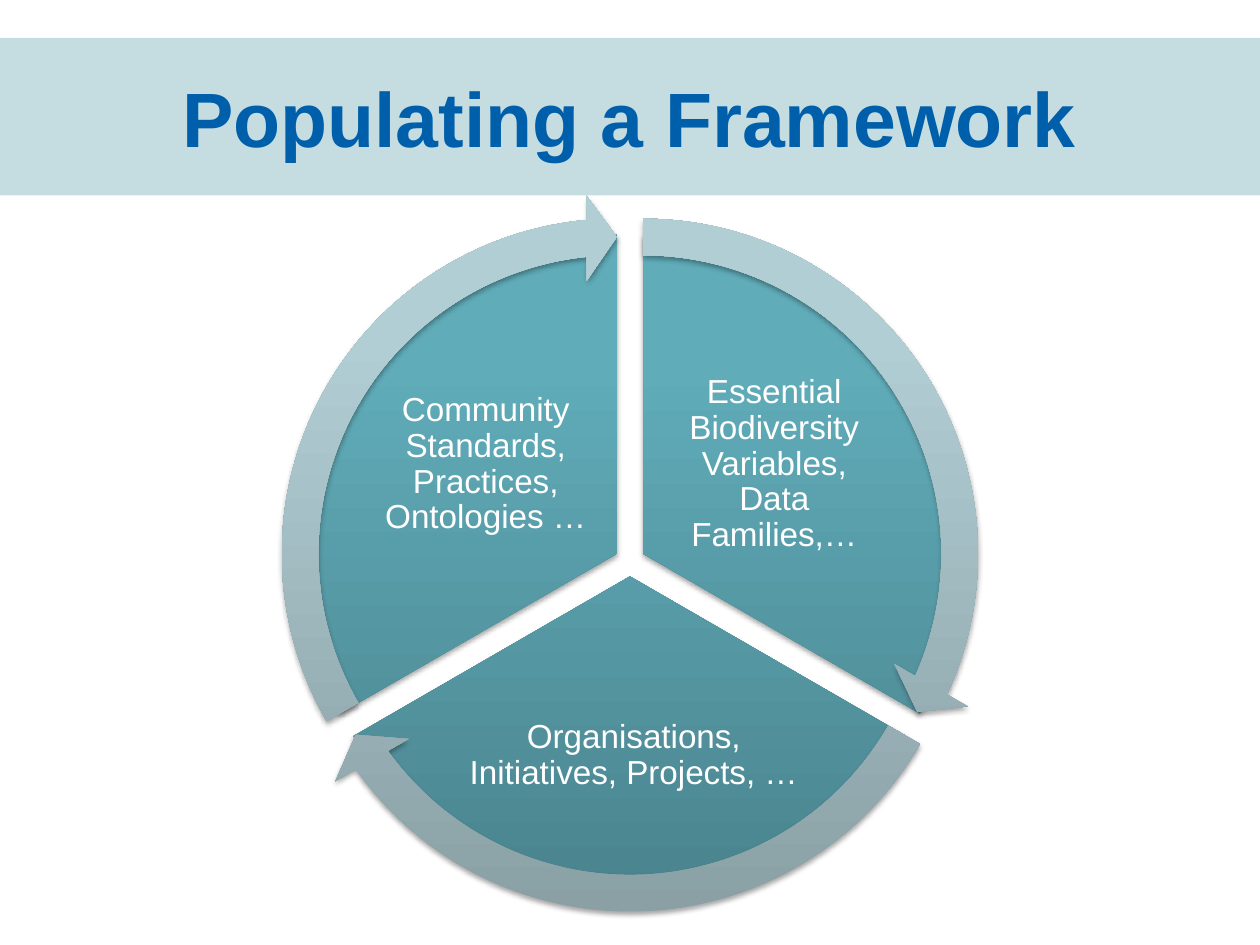
import math

from lxml import etree
from pptx import Presentation
from pptx import util as u
from pptx.dml.color import RGBColor
from pptx.enum import shapes, text
from pptx.oxml.ns import qn

COLOURS = {"band": "C5DDE1", "title": "005FAA", "label": "FFFFFF", "shadow": "000000"}
# Gradient stops from bottom to top: position in percent, colour
SECTOR_STOPS = [(0, "4A848E"), (80, "60ACB9"), (100, "5FAEBB")]
ARROW_STOPS = [(0, "889EA3"), (80, "B1CED4"), (100, "B1CFD5")]

COLUMNS, ROWS = 100, 75
CENTRE = (50, 44.55)
SPREAD = 1.2          # how far each sector is pushed out from the centre
SECTOR_SIZE, ARROW_SIZE = 50.7, 57
ANGLE_UNIT = 0.6      # one degree, as an adjustment value
ARROW_HEAD = 3.275    # angle taken by the arrowhead, as an adjustment value

# Clockwise from the top: label, then its left, top, width, height
SECTORS = [
    ("Essential Biodiversity Variables, Data Families,…", (52.4, 29.3, 18.1, 15.1)),
    ("Organisations, Initiatives, Projects, …", (36.7, 53.3, 27.2, 13.3)),
    ("Community Standards, Practices, Ontologies …", (29.5, 29.3, 18.1, 15.1)),
]


class SlideBuilder:
    font = "Arial"

    def __init__(self, deck):
        self.slide = deck.slides.add_slide(deck.slide_layouts[6])
        self.column = deck.slide_width / COLUMNS
        self.row = deck.slide_height / ROWS

    def place(self, left, top, width, height):
        return (round(left * self.column), round(top * self.row),
                round(width * self.column), round(height * self.row))

    def set_words(self, frame, words, size, colour, bold=False, spacing=1.0):
        frame.text = words
        frame.word_wrap = True
        frame.vertical_anchor = text.MSO_ANCHOR.MIDDLE
        paragraph = frame.paragraphs[0]
        paragraph.alignment = text.PP_ALIGN.CENTER
        paragraph.line_spacing = spacing
        font = paragraph.runs[0].font
        font.name, font.size, font.bold = self.font, u.Pt(size), bold
        font.color.rgb = RGBColor.from_string(COLOURS[colour])

    def shape(self, kind, box):
        shape = self.slide.shapes.add_shape(kind, *self.place(*box))
        shape.shadow.inherit = False
        shape.line.fill.background()
        return shape

    def title_band(self, words, box):
        band = self.shape(shapes.MSO_SHAPE.RECTANGLE, box)
        band.fill.solid()
        band.fill.fore_color.rgb = RGBColor.from_string(COLOURS["band"])
        self.set_words(band.text_frame, words, 44, "title", bold=True)

    def label(self, words, box):
        frame = self.slide.shapes.add_textbox(*self.place(*box)).text_frame
        frame.margin_left = frame.margin_right = u.Inches(0.03)
        frame.margin_top = frame.margin_bottom = u.Inches(0.03)
        self.set_words(frame, words, 19, "label", spacing=0.9)

    def round_part(self, kind, centre, size, adjustments, stops):
        x, y = centre
        part = self.shape(kind, (x - size / 2, y - size / 2, size, size))
        for index, value in enumerate(adjustments):
            part.adjustments[index] = value
        self.shade(part, stops)
        self.cast_shadow(part)

    def shade(self, part, stops):
        gradient = etree.Element(qn("a:gradFill"), rotWithShape="1")
        stop_list = etree.SubElement(gradient, qn("a:gsLst"))
        for position, colour in stops:
            stop = etree.SubElement(stop_list, qn("a:gs"), pos=str(position * 1000))
            etree.SubElement(stop, qn("a:srgbClr"), val=colour)
        etree.SubElement(gradient, qn("a:lin"), ang=str(270 * 60000), scaled="0")
        part._element.spPr.find(qn("a:prstGeom")).addnext(gradient)

    def cast_shadow(self, part):
        effects = part._element.spPr.find(qn("a:effectLst"))
        shadow = etree.SubElement(
            effects, qn("a:outerShdw"), blurRad=str(int(u.Pt(3.1))),
            dist=str(int(u.Pt(1.8))), dir=str(90 * 60000), rotWithShape="0")
        colour = etree.SubElement(shadow, qn("a:srgbClr"), val=COLOURS["shadow"])
        etree.SubElement(colour, qn("a:alpha"), val="35000")


def main():
    deck = Presentation()
    deck.slide_width, deck.slide_height = u.Inches(10), u.Inches(7.5)
    builder = SlideBuilder(deck)

    # Title
    builder.title_band("Populating a Framework", (0, 3, 100, 12.5))

    # Sectors with their labels
    arrows = []
    for number, (words, label_box) in enumerate(SECTORS):
        middle = math.radians(120 * number - 30)
        centre = (CENTRE[0] + SPREAD * math.cos(middle),
                  CENTRE[1] + SPREAD * math.sin(middle))
        start = (270 + 120 * number) % 360 * ANGLE_UNIT
        end = (30 + 120 * number) * ANGLE_UNIT
        builder.round_part(shapes.MSO_SHAPE.PIE, centre, SECTOR_SIZE,
                           (start, end), SECTOR_STOPS)
        builder.label(words, label_box)
        arrows.append((centre, start, end))

    # Arrows around the sectors
    for centre, start, end in arrows:
        builder.round_part(shapes.MSO_SHAPE.CIRCULAR_ARROW, centre, ARROW_SIZE,
                           (0.051, ARROW_HEAD, end - ARROW_HEAD, start, 0.059),
                           ARROW_STOPS)

    deck.save("out.pptx")


if __name__ == "__main__":
    main()
